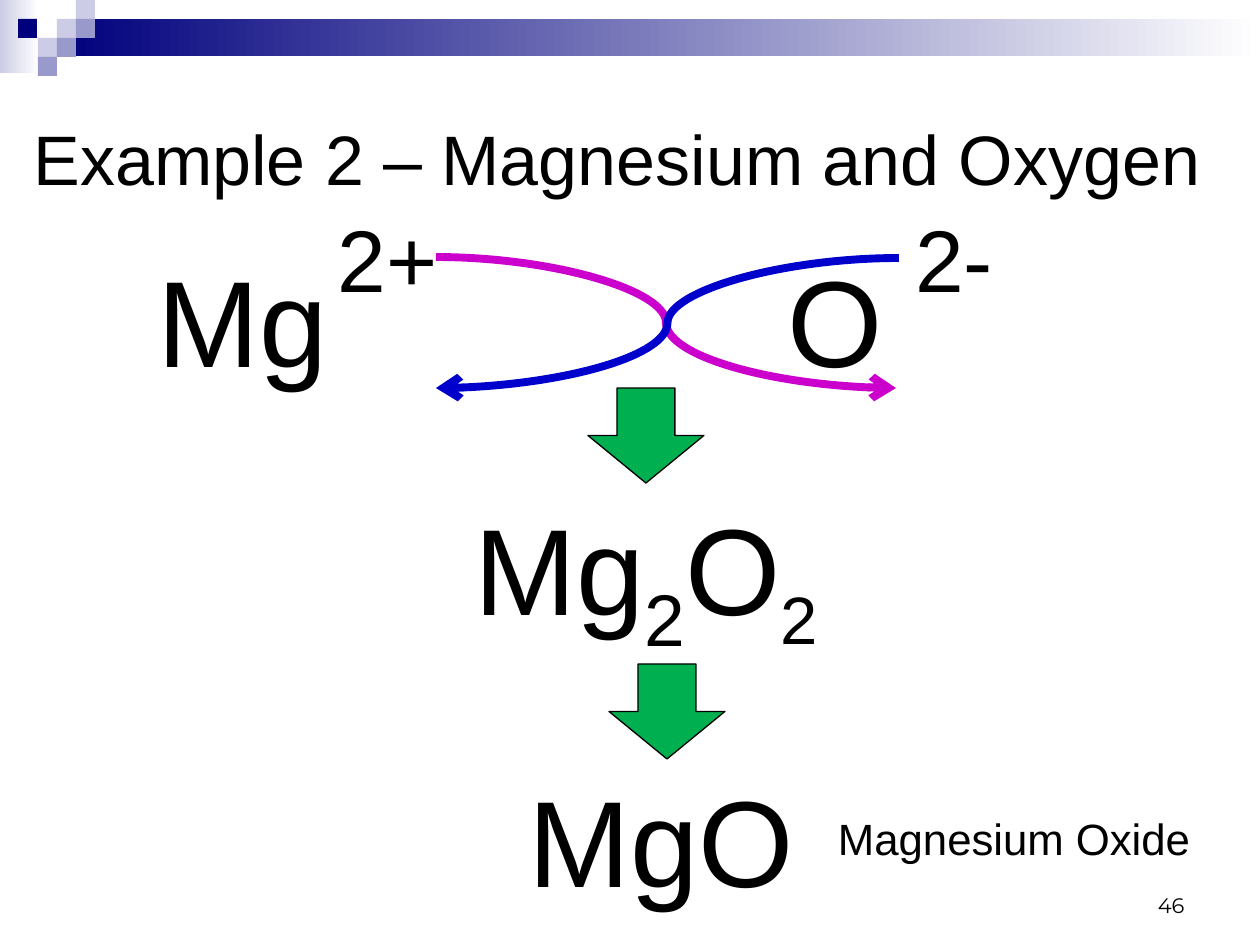
from lxml.etree import SubElement
from pptx import Presentation
from pptx.dml.color import RGBColor
from pptx.enum.shapes import MSO_CONNECTOR, MSO_SHAPE
from pptx.enum.text import MSO_ANCHOR, MSO_AUTO_SIZE, PP_ALIGN
from pptx.oxml.ns import qn
from pptx.util import Emu, Pt

PX_PER_INCH = 126
BLACK = RGBColor(0x00, 0x00, 0x00)
WHITE = RGBColor(0xFF, 0xFF, 0xFF)
NAVY = RGBColor(0x00, 0x00, 0x7D)
LAVENDER = RGBColor(0xCC, 0xCC, 0xE6)
PERIWINKLE = RGBColor(0x99, 0x99, 0xCC)
GREEN = RGBColor(0x00, 0xB0, 0x50)
MAGENTA = RGBColor(0xCC, 0x00, 0xCC)
BLUE = RGBColor(0x00, 0x00, 0xCC)

# Boxes are left, top, width, height in px.
GRADIENT_BARS = [((0, 0, 39, 73), LAVENDER), ((57, 19, 1203, 37), NAVY)]
SQUARE = 19
SQUARES = [
    (57, 19, LAVENDER), (76, 0, LAVENDER), (76, 19, PERIWINKLE),
    (38, 38, LAVENDER), (18, 19, NAVY), (57, 38, PERIWINKLE),
    (38, 57, PERIWINKLE),
]

TITLE = ("Example 2 – Magnesium and Oxygen", (21, 63, 1207, 189))
IONS = ("Mg\t\t\t\tO", (-63, 239, 1166, 179))
ION_TAB = 126

# Each run is text, size in points, baseline shift in percent.
FORMULAS = [
    ([("Mg", 70, 0), ("2", 72, -25), ("O", 70, 0), ("2", 66, -25)],
     (441, 483, 410, 179)),
    ([("MgO", 70, 0)], (456, 759, 410, 179)),
]
LABELS = [
    ("46", (903, 861, 294, 63), dict(size=12, font="Montserrat",
                                     align=PP_ALIGN.RIGHT, anchor=MSO_ANCHOR.BOTTOM)),
    ("2+", (325, 199, 126, 118), dict(size=50)),
    ("2-", (903, 199, 116, 118), dict(size=50)),
    ("Magnesium Oxide", (809, 806, 410, 66), dict(size=25, align=PP_ALIGN.CENTER)),
]
DOWN_ARROWS = [(588, 388, 116, 95), (609, 664, 116, 95)]
CHARGE_CURVES = [((436, 257, 896, 388), MAGENTA), ((899, 258, 436, 388), BLUE)]


def px(value):
    return Emu(round(value * 914400 / PX_PER_INCH))


def place(shape, box):
    shape.left, shape.top, shape.width, shape.height = map(px, box)


def write(shape, text, size=70, font="Arial", align=PP_ALIGN.LEFT,
          anchor=MSO_ANCHOR.TOP, space_percent=0, tab=None):
    """Write one paragraph; text is a string or a list of (text, size, baseline)."""
    frame = shape.text_frame
    frame.word_wrap = True
    frame.auto_size = MSO_AUTO_SIZE.NONE
    frame.vertical_anchor = anchor
    paragraph = frame.paragraphs[0]
    paragraph.alignment = align
    properties = paragraph._p.get_or_add_pPr()
    properties.set("marL", "0")
    properties.set("indent", "0")
    if tab:
        properties.set("defTabSz", str(px(tab)))
    spacing = SubElement(properties, qn("a:spcBef"))
    SubElement(spacing, qn("a:spcPct"), val=str(space_percent * 1000))
    SubElement(properties, qn("a:buNone"))
    runs = [(text, size, 0)] if isinstance(text, str) else text
    for words, run_size, baseline in runs:
        run = paragraph.add_run()
        run.text = words
        run.font.size = Pt(run_size)
        run.font.name = font
        run.font.color.rgb = BLACK
        if baseline:
            run.font._element.set("baseline", str(baseline * 1000))


def add_text(slide, text, box, **style):
    write(slide.shapes.add_textbox(*map(px, box)), text, **style)


def add_block(slide, kind, box, color, outlined=False, fade=False):
    shape = slide.shapes.add_shape(kind, *map(px, box))
    shape.shadow.inherit = False
    if fade:
        shape.fill.gradient()
        shape.fill.gradient_angle = 0
        for stop, stop_color, position in zip(
                shape.fill.gradient_stops, (color, WHITE), (0, 1)):
            stop.color.rgb = stop_color
            stop.position = position
    else:
        shape.fill.solid()
        shape.fill.fore_color.rgb = color
    if outlined:
        shape.line.color.rgb = BLACK
        shape.line.width = Pt(0.75)
    else:
        shape.line.fill.background()


def add_curve(slide, ends, color):
    curve = slide.shapes.add_connector(MSO_CONNECTOR.CURVE, *map(px, ends))
    curve.line.color.rgb = color
    curve.line.width = Pt(4.5)
    SubElement(curve.line._get_or_add_ln(), qn("a:tailEnd"), type="arrow")
    SubElement(curve._element.spPr, qn("a:effectLst"))


def main():
    presentation = Presentation()
    presentation.slide_width, presentation.slide_height = px(1260), px(945)
    slide = presentation.slides.add_slide(presentation.slide_layouts[1])
    title, body = slide.placeholders

    for box, color in GRADIENT_BARS:
        add_block(slide, MSO_SHAPE.RECTANGLE, box, color, fade=True)
    for left, top, color in SQUARES:
        add_block(slide, MSO_SHAPE.RECTANGLE, (left, top, SQUARE, SQUARE), color)

    place(title, TITLE[1])
    write(title, TITLE[0], size=40, anchor=MSO_ANCHOR.MIDDLE)
    place(body, IONS[1])
    write(body, IONS[0], align=PP_ALIGN.CENTER, space_percent=20, tab=ION_TAB)

    for text, box, style in LABELS:
        add_text(slide, text, box, **style)
    for runs, box in FORMULAS:
        add_text(slide, runs, box, align=PP_ALIGN.CENTER, space_percent=20)
    for box in DOWN_ARROWS:
        add_block(slide, MSO_SHAPE.DOWN_ARROW, box, GREEN, outlined=True)
    for ends, color in CHARGE_CURVES:
        add_curve(slide, ends, color)

    presentation.save("out.pptx")


if __name__ == "__main__":
    main()
